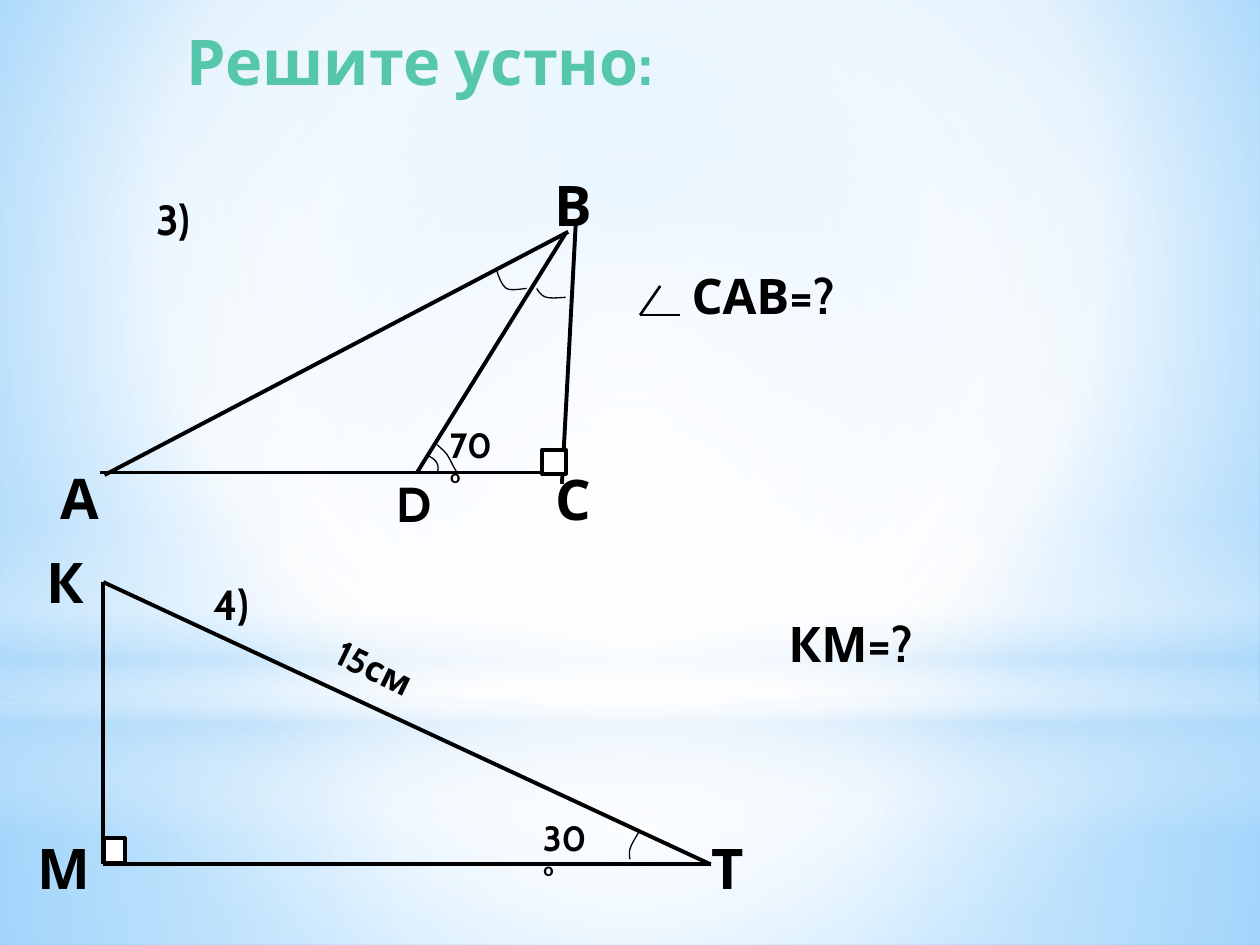
import lxml.etree
import pptx
import pptx.dml.color
import pptx.enum.shapes
import pptx.enum.text
import pptx.oxml
import pptx.oxml.ns
import pptx.util

RGB = pptx.dml.color.RGBColor
SHAPES = pptx.enum.shapes.MSO_SHAPE
inches = pptx.util.Inches

BLACK = RGB(0x00, 0x00, 0x00)
WHITE = RGB(0xFF, 0xFF, 0xFF)
MINT = RGB(0x56, 0xC7, 0xAA)
PALE = RGB(0xB4, 0xDC, 0xFA)
SKY = RGB(0x9E, 0xD5, 0xFF)
AZURE = RGB(0x5B, 0xB9, 0xFF)
FONT = "Cabin"
WIDTH, HEIGHT = 10, 7.5
HORIZON = 5.58

CENTRE = (50, 50, 50, 50)
BACKDROP = [(0, SKY, 100), (60, WHITE, 100), (100, AZURE, 100)]
BACKDROP_FOCUS = (20, 10, 20, 60)
GLOWS = [
    (SHAPES.RECTANGLE, (0, HORIZON, WIDTH, HEIGHT - HORIZON), CENTRE,
     [(0, WHITE, 91), (37, WHITE, 76), (100, PALE, 79)]),
    (SHAPES.RECTANGLE, (0, 0, WIDTH, HORIZON), CENTRE,
     [(0, WHITE, 89), (48, WHITE, 62), (100, PALE, 79)]),
    (SHAPES.RECTANGLE, (0, 4.12, WIDTH, 2.5), None,
     [(0, WHITE, 0), (29, WHITE, 30), (45, PALE, 40),
      (55, WHITE, 26), (65, PALE, 60), (100, WHITE, 0)]),
    (SHAPES.OVAL, (0, 1.75, WIDTH, HORIZON), CENTRE,
     [(0, WHITE, 100), (56, WHITE, 0)]),
]

K, M, T = (0.82, 4.62), (0.82, 6.86), (5.64, 6.86)
ANGLE_VERTEX = (5.08, 2.5)
SIDE, SIGN, ARC = 2.25, 1.5, 0.75
SEGMENTS = [
    ((0.79, 3.75), (4.47, 3.75), SIDE),
    ((0.83, 3.77), (4.51, 1.84), SIDE),
    ((4.46, 3.84), (4.57, 1.77), SIDE),
    ((4.49, 1.85), (3.31, 3.75), SIDE),
    (K, M, SIDE),
    (K, T, SIDE),
    (M, T, SIDE),
    ((5.24, 2.27), ANGLE_VERTEX, SIGN),
    (ANGLE_VERTEX, (5.4, 2.5), SIGN),
]
RIGHT_ANGLES = [(4.3, 3.57, 0.19, 0.19), (0.83, 6.65, 0.16, 0.2)]
ARCS = [
    [(3.94, 2.14), (3.96, 2.2), (3.98, 2.26), (4.02, 2.29),
     (4.06, 2.31), (4.15, 2.29), (4.18, 2.29)],
    [(4.26, 2.29), (4.28, 2.32), (4.3, 2.35), (4.34, 2.36),
     (4.38, 2.37), (4.47, 2.36), (4.49, 2.36)],
    [(3.39, 3.61), (3.42, 3.63), (3.46, 3.65), (3.47, 3.68),
     (3.48, 3.7), (3.48, 3.73), (3.47, 3.75)],
    [(3.47, 3.53), (3.49, 3.55), (3.52, 3.57), (3.55, 3.61),
     (3.57, 3.64), (3.61, 3.73), (3.63, 3.75)],
    [(5.08, 6.59), (5.05, 6.64), (5.01, 6.7), (5, 6.74),
     (4.99, 6.78), (5, 6.81), (5, 6.82)],
]
LABELS = [
    ("С", (4.31, 3.64, 0.52, 0.59), 32, BLACK, 0),
    ("D", (3.05, 3.71, 0.48, 0.53), 28, BLACK, 0),
    ("В", (4.3, 1.3, 0.52, 0.59), 32, BLACK, 0),
    ("А", (0.38, 3.63, 0.52, 0.59), 32, BLACK, 0),
    ("70°", (3.47, 3.31, 0.58, 0.4), 20, BLACK, 0),
    ("3)", (1.14, 1.49, 0.65, 0.5), 24, BLACK, 0),
    ("К", (0.27, 4.3, 0.47, 0.63), 32, BLACK, 0),
    ("Т", (5.55, 6.57, 0.47, 0.63), 32, BLACK, 0),
    ("М", (0.2, 6.57, 0.57, 0.63), 32, BLACK, 0),
    ("4)", (1.6, 4.54, 0.67, 0.5), 24, BLACK, 0),
    ("САВ=?", (5.39, 2.06, 1.5, 0.57), 28, BLACK, 0),
    ("30°", (4.21, 6.43, 0.58, 0.43), 20, BLACK, 0),
    ("15см", (2.56, 5.09, 0.87, 0.43), 20, BLACK, 25.8),
    ("КМ=?", (6.16, 4.82, 1.23, 0.57), 28, BLACK, 0),
    ("Решите устно:", (1.38, 0.13, 7.72, 0.71), 36, MINT, 0),
]


def paint_gradient(fill, owner, stops, focus):
    fill.gradient()
    gradient = next(owner.iter(pptx.oxml.ns.qn("a:gradFill")))
    colours = "".join(
        f'<a:gs pos="{position * 1000}"><a:srgbClr val="{colour}">'
        f'<a:alpha val="{opacity * 1000}"/></a:srgbClr></a:gs>'
        for position, colour, opacity in stops)
    if focus:
        edges = " ".join(f'{side}="{share * 1000}"' for side, share in zip("ltrb", focus))
        direction = f'<a:path path="circle"><a:fillToRect {edges}/></a:path>'
    else:
        direction = '<a:lin ang="5400000" scaled="0"/>'
    gradient.getparent().replace(gradient, pptx.oxml.parse_xml(
        f'<a:gradFill {pptx.oxml.ns.nsdecls("a")} rotWithShape="1">'
        f'<a:gsLst>{colours}</a:gsLst>{direction}</a:gradFill>'))


def draw_line(line, weight):
    line.color.rgb = BLACK
    line.width = pptx.util.Pt(weight)


def add_segment(slide, start, end, weight):
    segment = slide.shapes.add_connector(
        pptx.enum.shapes.MSO_CONNECTOR.STRAIGHT, *map(inches, start + end))
    draw_line(segment.line, weight)
    lxml.etree.SubElement(segment._element.spPr, pptx.oxml.ns.qn("a:effectLst"))


def bezier_points(controls, steps=8):
    for first in range(0, len(controls) - 1, 3):
        for step in range(1, steps + 1):
            t = step / steps
            weights = ((1 - t) ** 3, 3 * t * (1 - t) ** 2, 3 * t * t * (1 - t), t ** 3)
            yield tuple(sum(w * p[axis] for w, p in zip(weights, controls[first:first + 4]))
                        for axis in (0, 1))


def add_arc(slide, controls):
    start, *rest = [tuple(map(inches, point))
                    for point in [controls[0], *bezier_points(controls)]]
    builder = slide.shapes.build_freeform(*start)
    builder.add_line_segments(rest, close=False)
    arc = builder.convert_to_shape()
    arc.shadow.inherit = False
    arc.fill.background()
    draw_line(arc.line, ARC)


def add_label(slide, words, box, size, colour, angle):
    label = slide.shapes.add_textbox(*map(inches, box))
    label.rotation = angle
    frame = label.text_frame
    frame.word_wrap = True
    frame.auto_size = pptx.enum.text.MSO_AUTO_SIZE.SHAPE_TO_FIT_TEXT
    run = frame.paragraphs[0].add_run()
    run.text = words
    run.font.name = FONT
    run.font.size = pptx.util.Pt(size)
    run.font.bold = True
    run.font.color.rgb = colour


def main():
    deck = pptx.Presentation()
    deck.slide_width, deck.slide_height = inches(WIDTH), inches(HEIGHT)
    slide = deck.slides.add_slide(deck.slide_layouts[6])
    paint_gradient(slide.background.fill, slide._element, BACKDROP, BACKDROP_FOCUS)
    for outline, box, focus, stops in GLOWS:
        glow = slide.shapes.add_shape(outline, *map(inches, box))
        glow.shadow.inherit = False
        glow.line.fill.background()
        paint_gradient(glow.fill, glow._element, stops, focus)
    for segment in SEGMENTS:
        add_segment(slide, *segment)
    for box in RIGHT_ANGLES:
        corner = slide.shapes.add_shape(SHAPES.RECTANGLE, *map(inches, box))
        corner.shadow.inherit = False
        corner.fill.solid()
        corner.fill.fore_color.rgb = WHITE
        draw_line(corner.line, SIDE)
    for controls in ARCS:
        add_arc(slide, controls)
    for label in LABELS:
        add_label(slide, *label)
    deck.save("out.pptx")


if __name__ == "__main__":
    main()
